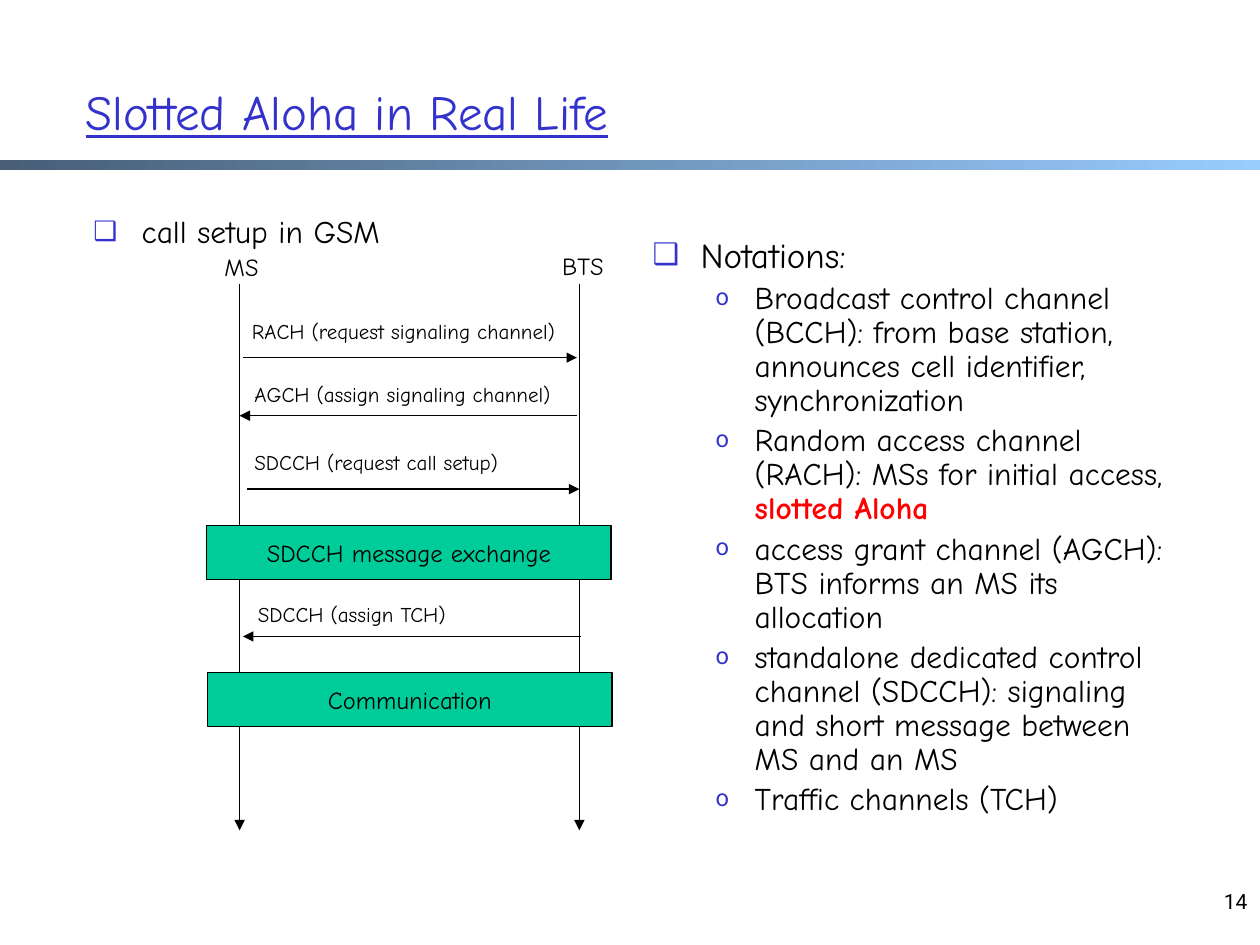
from lxml.etree import SubElement
from pptx import Presentation
from pptx.dml.color import RGBColor
from pptx.enum.shapes import MSO_CONNECTOR, MSO_SHAPE
from pptx.enum.text import MSO_ANCHOR, MSO_AUTO_SIZE, PP_ALIGN
from pptx.oxml.ns import qn
from pptx.util import Cm, Pt

COLORS = {
    "heading": "3333CC",
    "text": "000000",
    "accent": "FF0000",
    "box": "00CC99",
    "bar_start": "475E76",
    "bar_end": "99CCFF",
}
COLORS = {name: RGBColor.from_string(value) for name, value in COLORS.items()}
FONT = "Comic Neue"


def format_paragraph(paragraph, size, color="text", align=PP_ALIGN.LEFT, name=FONT):
    paragraph.alignment = align
    paragraph.font.name = name
    paragraph.font.size = Pt(size)
    paragraph.font.color.rgb = COLORS[color]


def add_arrow(shapes, start_x, start_y, end_x, end_y):
    arrow = shapes.add_connector(
        MSO_CONNECTOR.STRAIGHT, Cm(start_x), Cm(start_y), Cm(end_x), Cm(end_y))
    arrow.line.color.rgb = COLORS["text"]
    arrow.line.width = Pt(0.75)
    SubElement(arrow.line._get_or_add_ln(), qn("a:tailEnd"), type="triangle")
    SubElement(arrow._element.spPr, qn("a:effectLst"))


presentation = Presentation()
presentation.slide_width, presentation.slide_height = Cm(25.4), Cm(19.05)
slide = presentation.slides.add_slide(presentation.slide_layouts[3])
shapes = slide.shapes
title, call_setup, notations = slide.placeholders

bar = shapes.add_shape(MSO_SHAPE.RECTANGLE, Cm(0), Cm(3.23), Cm(25.4), Cm(0.2))
bar.shadow.inherit = False
bar.line.fill.background()
bar.fill.gradient()
bar.fill.gradient_angle = 0
for stop, color in zip(bar.fill.gradient_stops, ("bar_start", "bar_end")):
    stop.color.rgb = COLORS[color]

title.left, title.top, title.width, title.height = Cm(1.47), Cm(0.64), Cm(22.3), Cm(3.18)
title.text_frame.text = "Slotted Aloha in Real Life"
title.text_frame.vertical_anchor = MSO_ANCHOR.MIDDLE
title.text_frame.auto_size = MSO_AUTO_SIZE.NONE
format_paragraph(title.text_frame.paragraphs[0], 28, "heading")
title.text_frame.paragraphs[0].font.underline = True

BULLETS = [("❑", 0.97, -0.97, 85), ("o", 2.06, -0.79, 75)]
lists = [
    (call_setup, (1.63, 4.24, 10.59, 12.9), [(0, 18, "call setup in GSM", "")]),
    (notations, (12.9, 4.67, 11.1, 13.61), [
        (0, 20, "Notations:", ""),
        (1, 18, "Broadcast control channel (BCCH): from base station, "
                "announces cell identifier, synchronization", ""),
        (1, 18, "Random access channel (RACH): MSs for initial access, ", "slotted Aloha"),
        (1, 18, "access grant channel (AGCH): BTS informs an MS its allocation", ""),
        (1, 18, "standalone dedicated control channel (SDCCH): signaling "
                "and short message between MS and an MS", ""),
        (1, 18, "Traffic channels (TCH)", ""),
    ]),
]
for body, (left, top, width, height), items in lists:
    body.left, body.top, body.width, body.height = Cm(left), Cm(top), Cm(width), Cm(height)
    frame = body.text_frame
    frame.auto_size = MSO_AUTO_SIZE.NONE
    for index, (level, size, text, emphasis) in enumerate(items):
        paragraph = frame.add_paragraph() if index else frame.paragraphs[0]
        paragraph.level = level
        paragraph.line_spacing = 0.9
        paragraph.space_before = Pt(size * 0.2)
        paragraph.add_run().text = text
        if emphasis:
            run = paragraph.add_run()
            run.text = emphasis
            run.font.bold = True
            run.font.color.rgb = COLORS["accent"]
        symbol, margin, indent, percent = BULLETS[level]
        properties = paragraph._p.get_or_add_pPr()
        properties.set("marL", str(Cm(margin)))
        properties.set("indent", str(Cm(indent)))
        bullet_color = SubElement(properties, qn("a:buClr"))
        SubElement(bullet_color, qn("a:srgbClr"), val=str(COLORS["heading"]))
        SubElement(properties, qn("a:buSzPct"), val=str(percent * 1000))
        SubElement(properties, qn("a:buFont"), typeface="Roboto")
        SubElement(properties, qn("a:buChar"), char=symbol)
        format_paragraph(paragraph, size)

MS_X, BTS_X = 4.83, 11.68
for lifeline_x in (MS_X, BTS_X):
    add_arrow(shapes, lifeline_x, 5.72, lifeline_x, 16.74)

messages = [
    (4.9, 7.21, 11.63, 7.21),
    (11.63, 8.38, MS_X, 8.38),
    (4.98, 9.86, BTS_X, 9.86),
    (11.71, 12.83, 4.9, 12.83),
]
for message in messages:
    add_arrow(shapes, *message)

labels = [
    ("MS", 4.22, 4.95, 1.3, 14, PP_ALIGN.CENTER),
    ("BTS", 11, 4.93, 1.5, 14, PP_ALIGN.CENTER),
    ("RACH (request signaling channel)", 4.83, 6.3, 7.06, 12, PP_ALIGN.LEFT),
    ("AGCH (assign signaling channel)", 4.88, 7.57, 6.78, 12, PP_ALIGN.LEFT),
    ("SDCCH (request call setup)", 4.88, 8.94, 5.94, 12, PP_ALIGN.LEFT),
    ("SDCCH (assign TCH)", 4.95, 12.01, 4.6, 12, PP_ALIGN.LEFT),
]
for text, left, top, width, size, align in labels:
    label = shapes.add_textbox(Cm(left), Cm(top), Cm(width), Cm(0.8))
    label.text_frame.text = text
    format_paragraph(label.text_frame.paragraphs[0], size, align=align)

for text, left, top in [("SDCCH message exchange", 4.17, 10.59), ("Communication", 4.19, 13.56)]:
    phase = shapes.add_shape(MSO_SHAPE.RECTANGLE, Cm(left), Cm(top), Cm(8.15), Cm(1.09))
    phase.shadow.inherit = False
    phase.fill.solid()
    phase.fill.fore_color.rgb = COLORS["box"]
    phase.line.color.rgb = COLORS["text"]
    phase.line.width = Pt(0.75)
    phase.text_frame.text = text
    phase.text_frame.vertical_anchor = MSO_ANCHOR.MIDDLE
    format_paragraph(phase.text_frame.paragraphs[0], 14, align=PP_ALIGN.CENTER)

page_number = shapes.add_textbox(Cm(19.48), Cm(17.78), Cm(5.92), Cm(1.27))
page_number.text_frame.word_wrap = True
page_number.text_frame.text = "14"
format_paragraph(page_number.text_frame.paragraphs[0], 12, align=PP_ALIGN.RIGHT, name="Roboto")

presentation.save("out.pptx")
